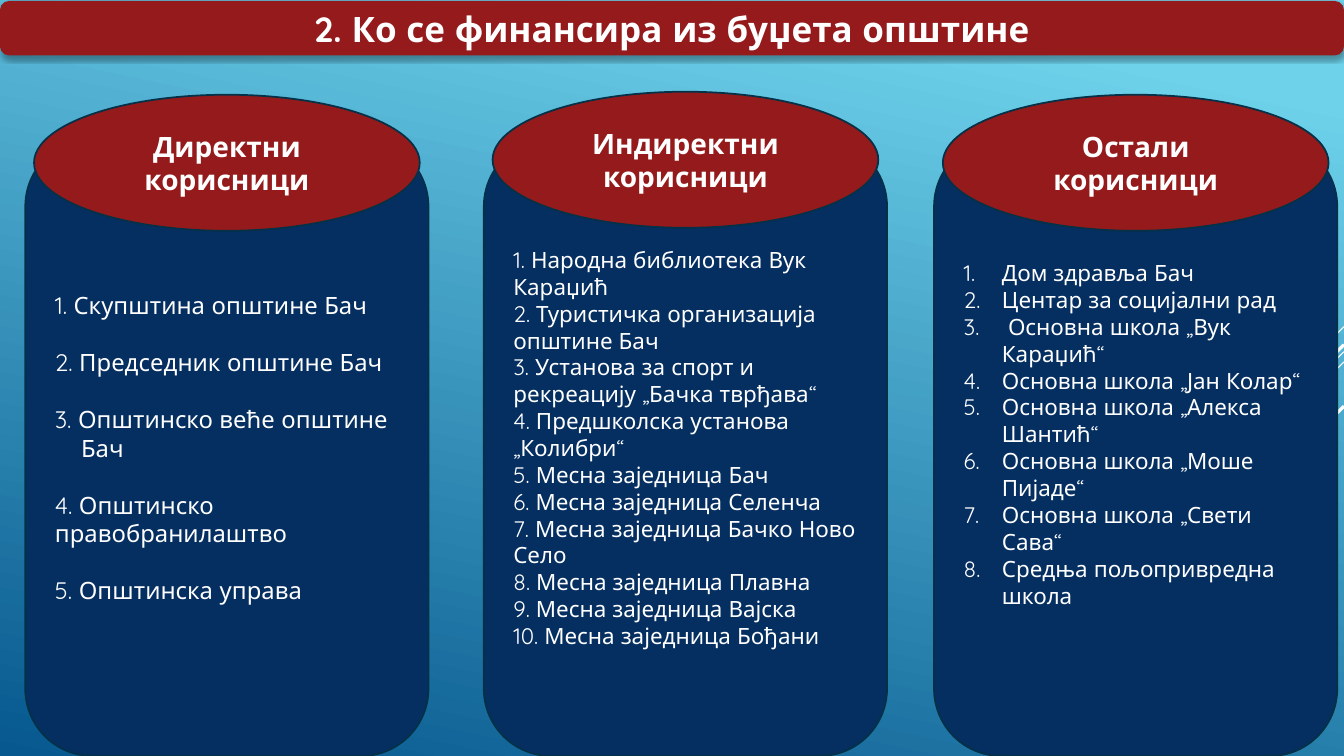
"""Build the slide on who is financed from the municipal budget."""
from lxml.etree import SubElement
from pptx import Presentation
from pptx.dml.color import RGBColor
from pptx.enum.shapes import MSO_CONNECTOR as Connector, MSO_SHAPE as Shape
from pptx.enum.text import MSO_ANCHOR as Anchor, PP_ALIGN as Align
from pptx.oxml.ns import qn
from pptx.util import Inches, Pt

NAVY, RED, EDGE, WHITE = "052F61", "941A1B", "043148", "FFFFFF"

deck = Presentation()
deck.slide_width, deck.slide_height = Inches(13.33), Inches(7.5)
col, row = deck.slide_width / 100, deck.slide_height / 100
slide = deck.slides.add_slide(deck.slide_layouts[6])


def rgb(code):
    return RGBColor.from_string(code)


def add_block(kind, left, top, width, height, fill, texts, size, bold=False, align=Align.CENTER):
    block = slide.shapes.add_shape(
        kind, int(left * col), int(top * row), int(width * col), int(height * row))
    block.shadow.inherit = False
    block.fill.solid()
    block.fill.fore_color.rgb = rgb(fill)
    block.line.color.rgb = rgb(EDGE)
    block.line.width = Pt(1.25)
    frame = block.text_frame
    frame.word_wrap = True
    frame.vertical_anchor = Anchor.MIDDLE
    for number, text in enumerate(texts):
        paragraph = frame.add_paragraph() if number else frame.paragraphs[0]
        paragraph.alignment = align
        run = paragraph.add_run()
        run.text = text
        run.font.name, run.font.size, run.font.bold = "Quicksand", Pt(size), bold
        run.font.color.rgb = rgb(WHITE)
    return block


backdrop = slide.background.fill
backdrop.gradient()
backdrop.gradient_angle = 258
for stop, (position, shade) in zip(backdrop.gradient_stops, [(0.1, "6ED2EB"), (1, "06588E")]):
    stop.position = position
    stop.color.rgb = rgb(shade)

rays = [(43.2, 7.5, 0.75), (46.53, 24.45, 0.75), (47.87, 15.53, 0.75),
        (45.6, 14.33, 2.25), (53.73, 10.43, 2.25)]
for start, reach, weight in rays:
    ray = slide.shapes.add_connector(
        Connector.STRAIGHT, int(100 * col), int(start * row),
        int((100 - reach) * col), int(start * row + reach * col))
    ray.line.color.rgb = rgb(WHITE)
    ray.line.width = Pt(weight)
    SubElement(ray._element.spPr, qn("a:effectLst"))

title = add_block(Shape.ROUNDED_RECTANGLE, 0, 0.13, 100, 7.2, RED,
                  ["2. Ко се финансира из буџета општине"], 25, bold=True)
title.line.fill.background()
glow = SubElement(title._element.spPr.find(qn("a:effectLst")), qn("a:outerShdw"),
                  blurRad=str(Pt(3.5)), dist=str(Pt(2.2)), dir="5400000", rotWithShape="0")
black = SubElement(glow, qn("a:srgbClr"), val="000000")
SubElement(black, qn("a:alpha"), val="32000")

direct = ["1. Скупштина општине Бач", "2. Председник општине Бач",
          "3. Општинско веће општине Бач", "4. Општинско правобранилаштво",
          "5. Општинска управа"]
indirect = ["1. Народна библиотека Вук Караџић", "2. Туристичка организација општине Бач",
            "3. Установа за спорт и рекреацију „Бачка тврђава“",
            "4. Предшколска установа „Колибри“", "5. Месна заједница Бач",
            "6. Месна заједница Селенча", "7. Месна заједница Бачко Ново Село",
            "8. Месна заједница Плавна", "9. Месна заједница Вајска",
            "10. Месна заједница Бођани"]
others = ["Дом здравља Бач", "Центар за социјални рад", " Основна школа „Вук Караџић“",
          "Основна школа „Јан Колар“", "Основна школа „Алекса Шантић“",
          "Основна школа „Моше Пијаде“", "Основна школа „Свети Сава“",
          "Средња пољопривредна школа"]
groups = [("Директни корисници", direct, 17, 1.88, 12.53),
          ("Индиректни корисници", indirect, 16, 36, 12.13),
          ("Остали корисници", others, 16, 69.5, 12.53)]
panels = []
for heading, users, size, left, crest in groups:
    panels.append(add_block(Shape.ROUNDED_RECTANGLE, left, 18.4, 30, 81.6, NAVY,
                            users, size, align=Align.LEFT))
    add_block(Shape.OVAL, left + 0.65, crest, 28.7, 18, RED, [heading], 20, bold=True)

direct_frame, _, others_frame = [panel.text_frame for panel in panels]
for entry in direct_frame.paragraphs[1:]:
    entry.space_before = Pt(20.4)
council = direct_frame.paragraphs[2]._p.get_or_add_pPr()
council.set("marL", str(Inches(0.26)))
council.set("indent", str(-Inches(0.26)))

others_frame.margin_bottom = Inches(0.32)
for entry in others_frame.paragraphs:
    numbering = entry._p.get_or_add_pPr()
    numbering.set("marL", str(Inches(0.38)))
    numbering.set("indent", str(-Inches(0.38)))
    SubElement(numbering, qn("a:buAutoNum"), type="arabicPeriod")

deck.save("out.pptx")
